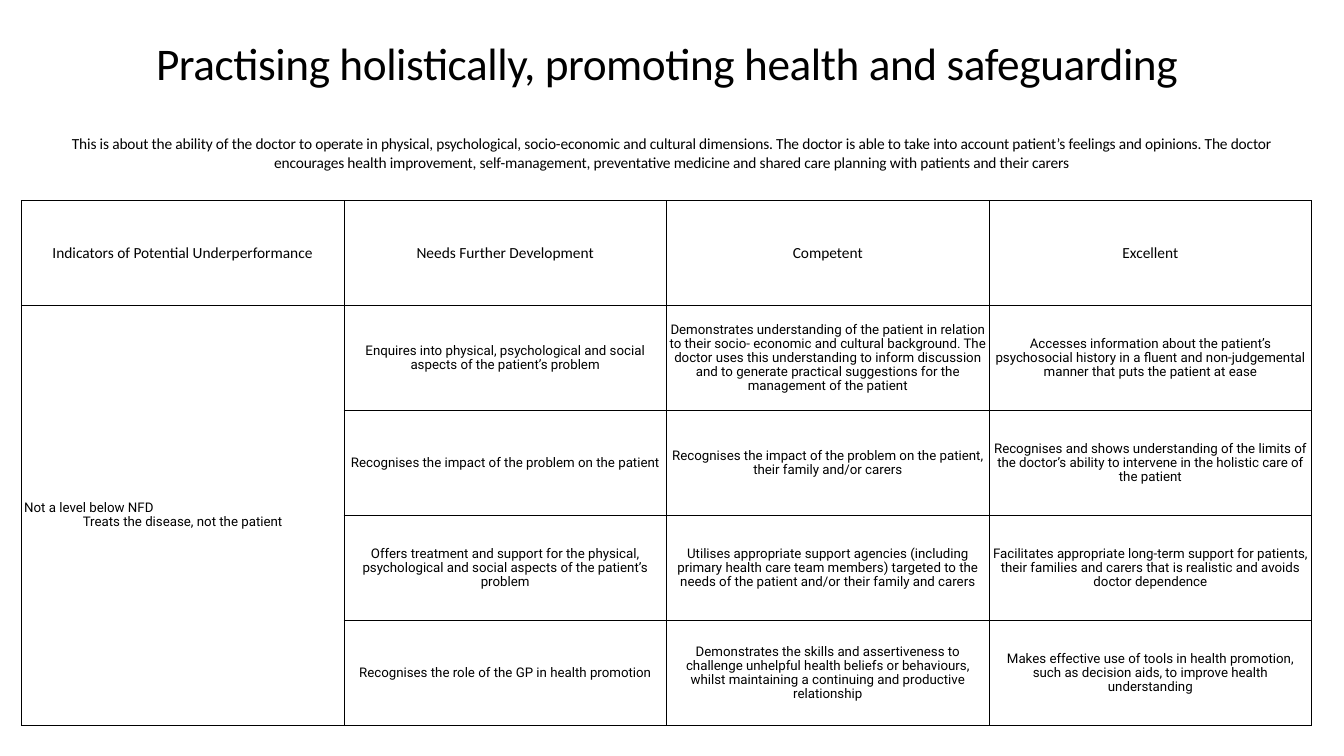
"""Build a slide with a grid of performance levels for holistic practice."""
from lxml import etree
from pptx import Presentation
from pptx import util as u
from pptx.dml import color
from pptx.enum import text
from pptx.oxml import ns

BLACK = color.RGBColor(0x00, 0x00, 0x00)
MARGINS = dict.fromkeys(
    ("margin_left", "margin_right", "margin_top", "margin_bottom"), u.Cm(0.15))
CENTRE, LEFT = text.PP_ALIGN.CENTER, text.PP_ALIGN.LEFT


def apply(target, **values):
    for key, value in values.items():
        setattr(target, key, value)


def write(frame, lines, size, font, spacing, alignments=(CENTRE,)):
    frame.text = lines
    for paragraph, alignment in zip(frame.paragraphs, alignments):
        apply(paragraph, alignment=alignment, line_spacing=spacing,
              space_before=u.Pt(0), space_after=u.Pt(0))
        run = paragraph.runs[0]
        apply(run.font, size=u.Pt(size), name=font, bold=False)
        run.font.color.rgb = BLACK


deck = Presentation()
apply(deck, slide_width=u.Cm(67.74), slide_height=u.Cm(38.1))
slide = deck.slides.add_slide(deck.slide_layouts[1])
title, summary = slide.placeholders

headings = [
    (title, 2.16, 4.8, 64.7, 0.8, "-60",
     "Practising holistically, promoting health and safeguarding "),
    (summary, 6.63, 2.31, 22, 1.0, "-20",
     "This is about the ability of the doctor to operate in physical, psychological, "
     "socio-economic and cultural dimensions. The doctor is able to take into account "
     "patient’s feelings and opinions. The doctor encourages health improvement, "
     "self-management, preventative medicine and shared care planning with patients "
     "and their carers"),
]
for heading, top, height, size, spacing, tracking, wording in headings:
    apply(heading, left=u.Cm(3.38), top=u.Cm(top), width=u.Cm(60.96), height=u.Cm(height))
    apply(heading.text_frame, word_wrap=True, auto_size=text.MSO_AUTO_SIZE.NONE,
          vertical_anchor=text.MSO_ANCHOR.TOP, **MARGINS)
    write(heading.text_frame, wording, size, "Calibri", spacing)
    paragraph = heading.text_frame.paragraphs[0]
    paragraph.runs[0]._r.get_or_add_rPr().set("spc", tracking)
    properties = paragraph._p.get_or_add_pPr()
    properties.set("marL", "0")
    properties.set("indent", "0")
    etree.SubElement(properties, ns.qn("a:buNone"))

levels = [
    ["Indicators of Potential Underperformance", "Needs Further Development",
     "Competent", "Excellent"],
    ["Not a level below NFD\nTreats the disease, not the patient",
     "Enquires into physical, psychological and social aspects of the patient’s problem",
     "Demonstrates understanding of the patient in relation to their socio- economic and "
     "cultural background. The doctor uses this understanding to inform discussion and to "
     "generate practical suggestions for the management of the patient",
     "Accesses information about the patient’s psychosocial history in a fluent and "
     "non-judgemental manner that puts the patient at ease"],
    ["", "Recognises the impact of the problem on the patient",
     "Recognises the impact of the problem on the patient, their family and/or carers",
     "Recognises and shows understanding of the limits of the doctor’s ability to "
     "intervene in the holistic care of the patient"],
    ["", "Offers treatment and support for the physical, psychological and social aspects "
     "of the patient’s problem",
     "Utilises appropriate support agencies (including primary health care team members) "
     "targeted to the needs of the patient and/or their family and carers",
     "Facilitates appropriate long-term support for patients, their families and carers "
     "that is realistic and avoids doctor dependence"],
    ["", "Recognises the role of the GP in health promotion",
     "Demonstrates the skills and assertiveness to challenge unhelpful health beliefs or "
     "behaviours, whilst maintaining a continuing and productive relationship",
     "Makes effective use of tools in health promotion, such as decision aids, to improve "
     "health understanding"],
]
grid = slide.shapes.add_table(
    len(levels), len(levels[0]), u.Cm(1.07), u.Cm(10.11), u.Cm(65.04), u.Cm(26.45)).table
apply(grid, first_row=False, horz_banding=False)
grid.cell(1, 0).merge(grid.cell(4, 0))

for row, entries in enumerate(levels):
    size, font = (22, "Calibri") if row == 0 else (19, "Roboto")
    for column, entry in enumerate(entries):
        cell = grid.cell(row, column)
        apply(cell, vertical_anchor=text.MSO_ANCHOR.MIDDLE, **MARGINS)
        cell.fill.background()
        if entry:
            alignments = (LEFT, CENTRE) if "\n" in entry else (CENTRE,)
            write(cell.text_frame, entry, size, font, 0.9, alignments)
        for position, side in enumerate(("a:lnL", "a:lnR", "a:lnT", "a:lnB")):
            border = etree.Element(ns.qn(side), w=str(u.Pt(1)))
            ink = etree.SubElement(border, ns.qn("a:solidFill"))
            etree.SubElement(ink, ns.qn("a:srgbClr"), val=str(BLACK))
            cell._tc.get_or_add_tcPr().insert(position, border)

deck.save("out.pptx")
